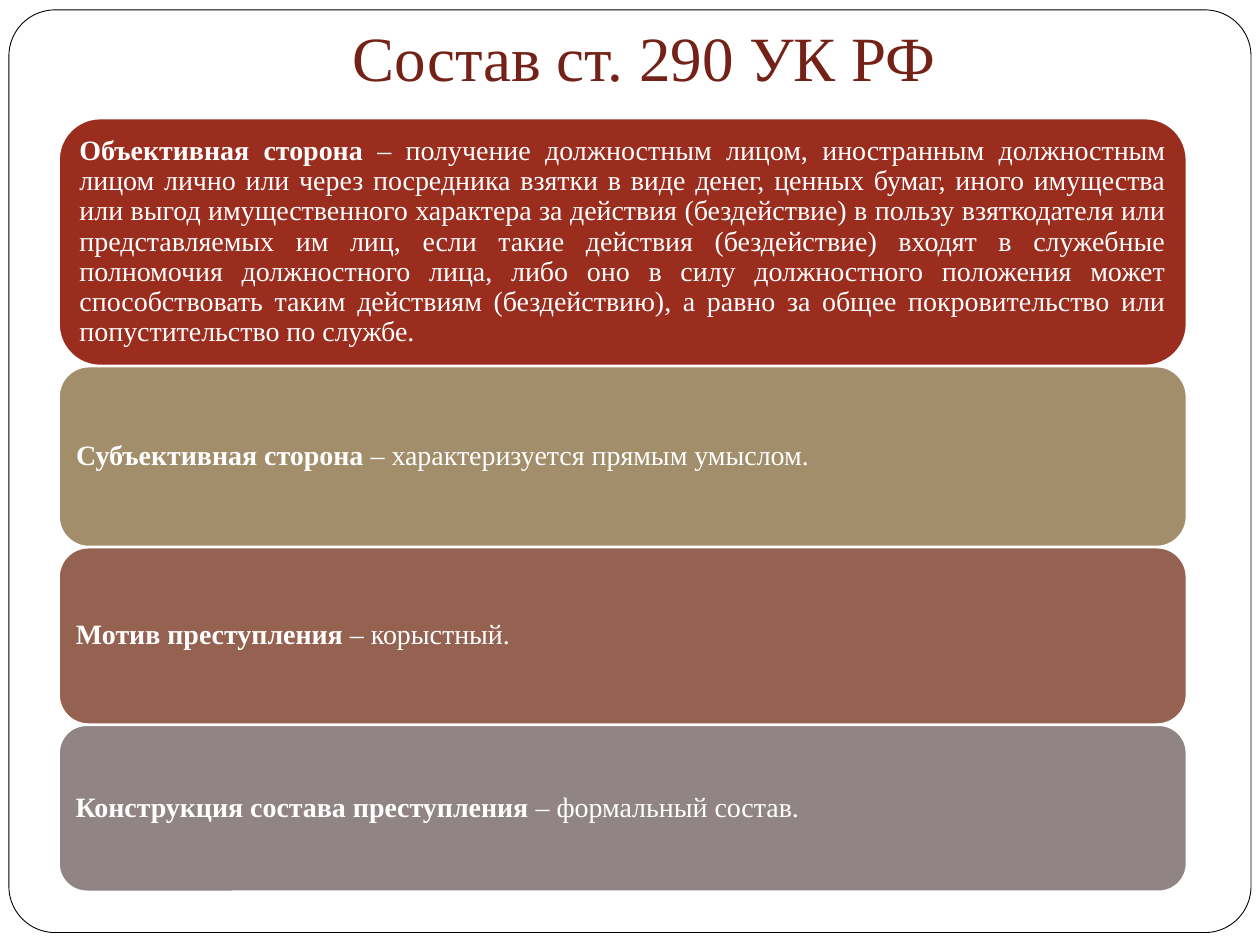
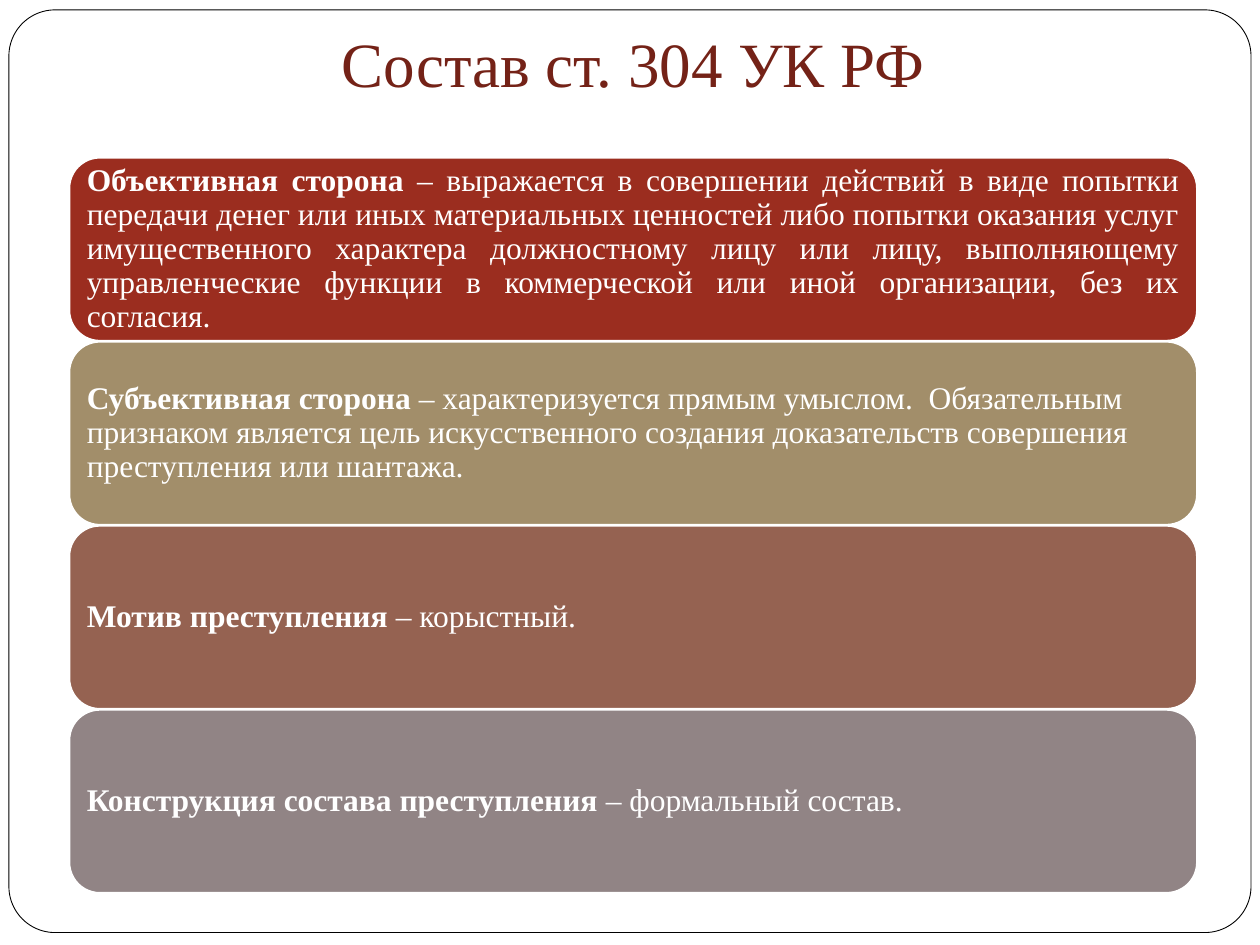
from pptx import Presentation
from pptx.dml.color import RGBColor
from pptx.enum.shapes import MSO_SHAPE
from pptx.enum.text import MSO_ANCHOR, PP_ALIGN
from pptx.util import Cm, Pt

FONT = "Times New Roman"
WHITE, BLACK, TITLE_COLOR = "FFFFFF", "000000", "742217"
BAND_COLORS = ["9B2D1F", "A28E6A", "956251", "918485"]
BAND_WIDTH, BAND_GAP = 22.73, 0.02

MOTIVE = ("Мотив преступления ", "– корыстный.")
CONSTRUCTION = ("Конструкция состава преступления ", "– формальный состав.")

SLIDES = [
    {
        # The closing space moves the centred title slightly to the left
        "title": "Состав ст. 290 УК РФ ",
        "title_place": (1.78, 0.41, BAND_WIDTH, 1.73),
        "left": 1.19, "top": 2.39, "heights": [4.98, 3.63, 3.56, 3.35], "size": 16,
        "bands": [
            ("Объективная сторона ",
             "– получение должностным лицом, иностранным должностным лицом лично "
             "или через посредника взятки в виде денег, ценных бумаг, иного "
             "имущества или выгод имущественного характера за действия "
             "(бездействие) в пользу взяткодателя или представляемых им лиц, если "
             "такие действия (бездействие) входят в служебные полномочия "
             "должностного лица, либо оно в силу должностного положения может "
             "способствовать таким действиям (бездействию), а равно за общее "
             "покровительство или попустительство по службе."),
            ("Субъективная сторона ", "– характеризуется прямым умыслом."),
            MOTIVE,
            CONSTRUCTION,
        ],
    },
    {
        "title": "Состав ст. 304 УК РФ",
        "title_place": (1.4, 0.58, BAND_WIDTH, 1.68),
        "left": 1.4, "top": 3.18, "heights": [3.69] * 4, "size": 18,
        "bands": [
            ("Объективная сторона ",
             "– выражается в совершении действий в виде попытки передачи денег или "
             "иных материальных ценностей либо попытки оказания услуг "
             "имущественного характера должностному лицу или лицу, выполняющему "
             "управленческие функции в коммерческой или иной организации, без их "
             "согласия."),
            ("Субъективная сторона ",
             "– характеризуется прямым умыслом.  Обязательным признаком является "
             "цель искусственного создания доказательств совершения преступления "
             "или шантажа."),
            MOTIVE,
            CONSTRUCTION,
        ],
    },
]


def color(hex_string):
    return RGBColor.from_string(hex_string)


class PageBuilder:
    """Holds the deck and its style, and draws on the current page."""

    def __init__(self):
        self.deck = Presentation()
        self.deck.slide_width, self.deck.slide_height = Cm(25.4), Cm(19.05)
        self.page = None

    def new_page(self):
        self.page = self.deck.slides.add_slide(self.deck.slide_layouts[6])
        frame = self.rounded_box((0.18, 0.2, 25.04, 18.6), WHITE, BLACK, 0.5)
        frame.adjustments[0] = 0.05

    def rounded_box(self, place, fill, line, line_width):
        box = self.page.shapes.add_shape(MSO_SHAPE.ROUNDED_RECTANGLE, *map(Cm, place))
        box.shadow.inherit = False
        box.fill.solid()
        box.fill.fore_color.rgb = color(fill)
        box.line.color.rgb = color(line)
        box.line.width = Pt(line_width)
        return box

    def set_text(self, box, spans, size, text_color, align, anchor, margins):
        """Write (text, bold) spans as one paragraph; margins run left, top, right, bottom."""
        text_frame = box.text_frame
        text_frame.word_wrap = True
        text_frame.vertical_anchor = anchor
        (text_frame.margin_left, text_frame.margin_top,
         text_frame.margin_right, text_frame.margin_bottom) = map(Cm, margins)
        para = text_frame.paragraphs[0]
        para.alignment = align
        for text, bold in spans:
            span = para.add_run()
            span.text = text
            span.font.name = FONT
            span.font.size = Pt(size)
            span.font.bold = bold
            span.font.color.rgb = color(text_color)
        return para

    def title(self, text, place):
        box = self.page.shapes.add_textbox(*map(Cm, place))
        self.set_text(box, [(text, False)], 36, TITLE_COLOR, PP_ALIGN.CENTER,
                      MSO_ANCHOR.BOTTOM, (0.25, 0.13, 0.25, 0.25))

    def band(self, place, fill, term, meaning, size, align):
        box = self.rounded_box(place, fill, WHITE, 1)
        para = self.set_text(box, [(term, True), (meaning, False)], size, WHITE,
                             align, MSO_ANCHOR.MIDDLE, (0.17,) * 4)
        para.line_spacing = 0.9

    def band_stack(self, left, top, heights, bands, size):
        """Stack the bands downwards; only the first one is justified."""
        align = PP_ALIGN.JUSTIFY
        for height, fill, (term, meaning) in zip(heights, BAND_COLORS, bands):
            self.band((left, top, BAND_WIDTH, height), fill, term, meaning, size, align)
            top += height + BAND_GAP
            align = PP_ALIGN.LEFT


def main():
    builder = PageBuilder()
    for content in SLIDES:
        builder.new_page()
        builder.title(content["title"], content["title_place"])
        builder.band_stack(content["left"], content["top"], content["heights"],
                           content["bands"], content["size"])
    builder.deck.save("out.pptx")


if __name__ == "__main__":
    main()
